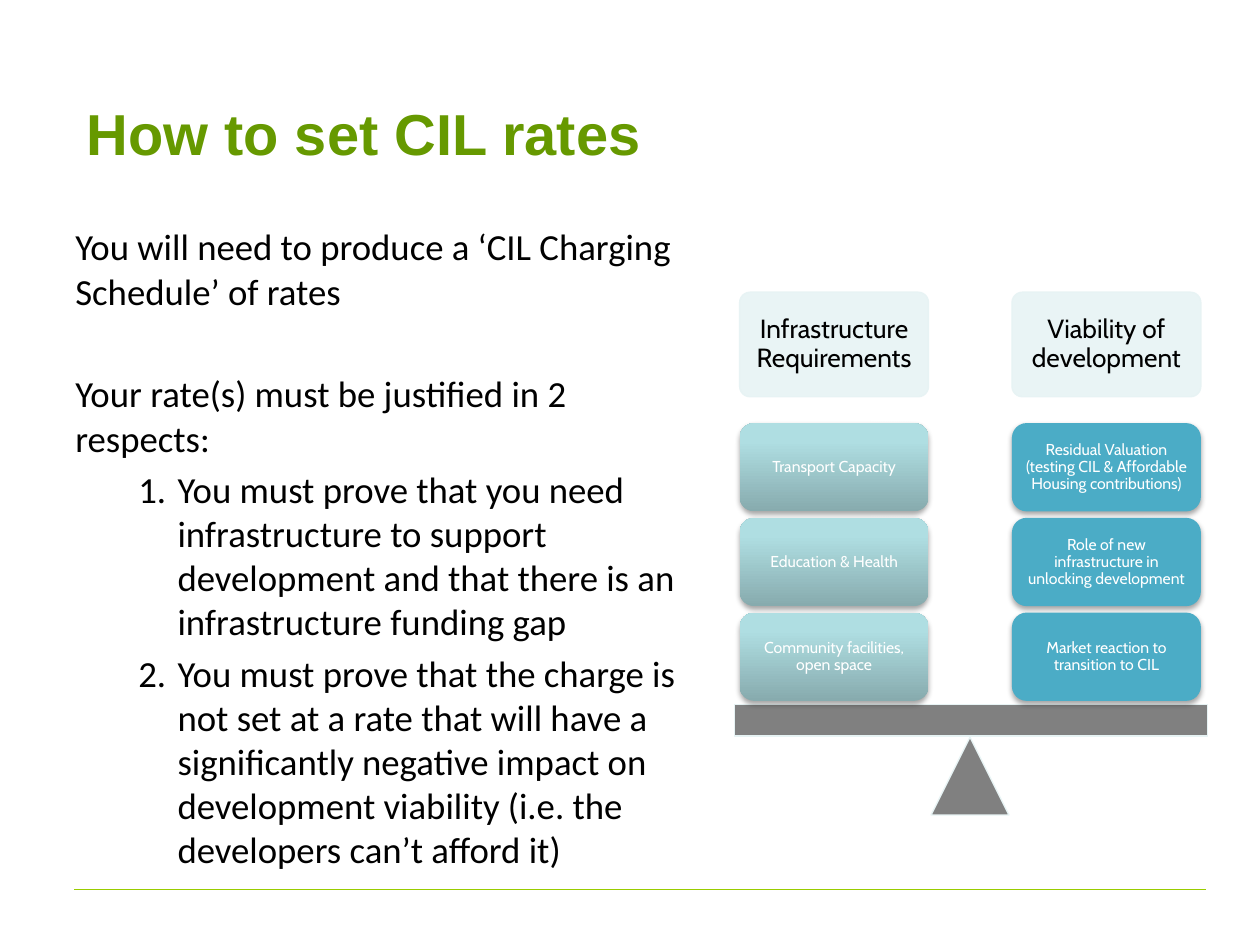
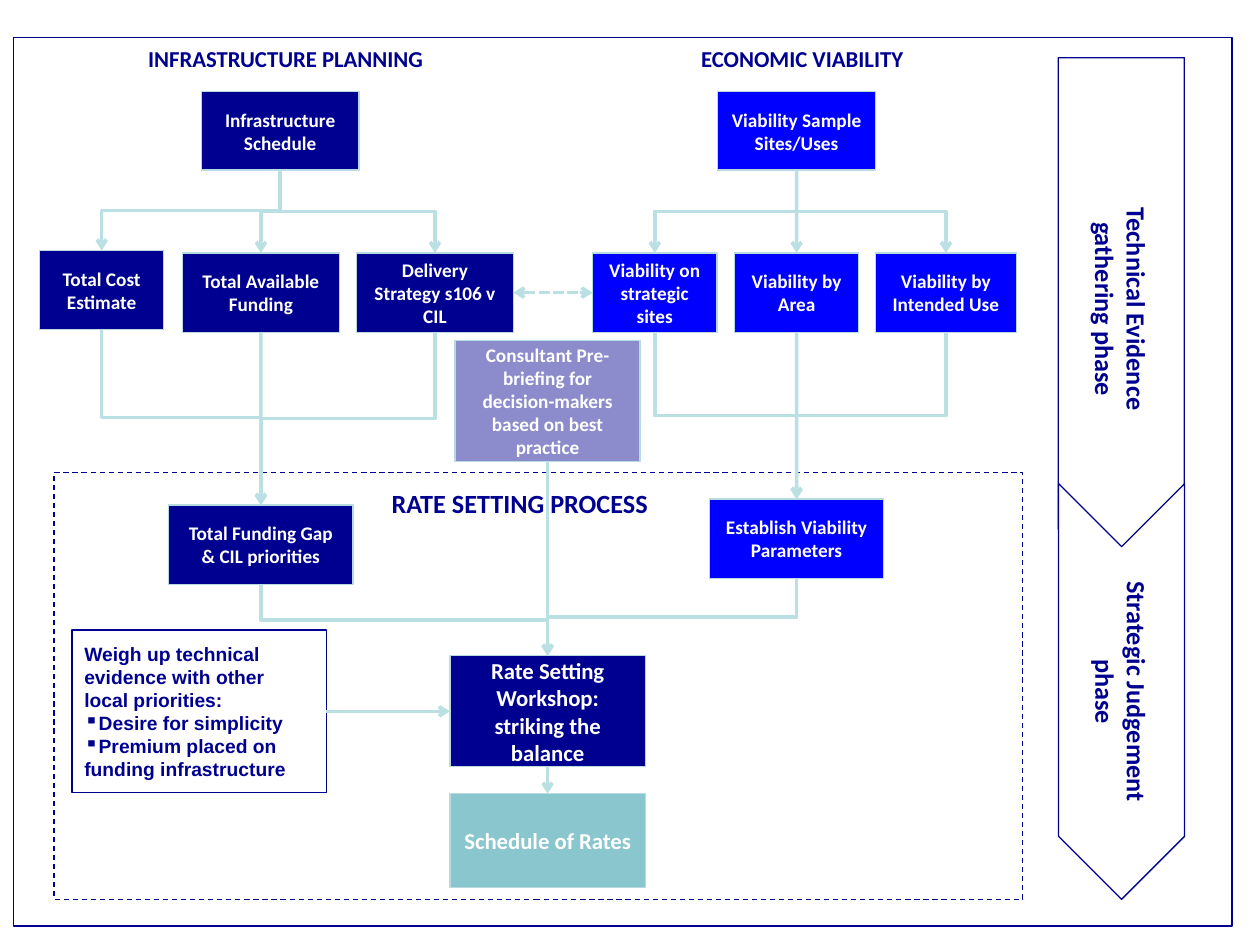
from lxml import etree
from pptx import Presentation
from pptx.dml.color import RGBColor
from pptx.enum import dml, shapes, text
from pptx.oxml.ns import qn
from pptx.util import Cm, Pt

WHITE = RGBColor(0xFF, 0xFF, 0xFF)
BLACK = RGBColor(0x00, 0x00, 0x00)
GREY = RGBColor(0x80, 0x80, 0x80)
TITLE_GREEN = RGBColor(0x66, 0x99, 0x00)
RULE_GREEN = RGBColor(0x99, 0xCC, 0x00)
PALE_TEAL = RGBColor(0xE7, 0xF3, 0xF4)
DARK_TEAL = RGBColor(0x87, 0xAB, 0xAE)
LIGHT_TEAL = RGBColor(0xAF, 0xDE, 0xE2)
CARD_BLUE = RGBColor(0x4B, 0xAC, 0xC6)
NAVY = RGBColor(0x00, 0x00, 0x90)
BLUE = RGBColor(0x00, 0x00, 0xFF)
TEAL = RGBColor(0x8A, 0xC6, 0xCD)
EDGE_TEAL = RGBColor(0xB6, 0xDC, 0xDF)
LINK_TEAL = RGBColor(0xBB, 0xE0, 0xE3)

SHAPE = shapes.MSO_SHAPE
LEFT, CENTER = text.PP_ALIGN.LEFT, text.PP_ALIGN.CENTER


def add_box(slide, frame, kind=None, fill=None, outline=None):
    """Add a preset shape, or a text box when no kind is given; frame is in cm."""
    lengths = [Cm(value) for value in frame]
    if kind is None:
        return slide.shapes.add_textbox(*lengths)
    shape = slide.shapes.add_shape(kind, *lengths)
    shape.shadow.inherit = False
    if fill is None:
        shape.fill.background()
    else:
        shape.fill.solid()
        shape.fill.fore_color.rgb = fill
    if outline is None:
        shape.line.fill.background()
    else:
        shape.line.color.rgb = outline
        shape.line.width = Pt(0.75)
    return shape


def write(shape, lines, size, name, color, bold=False, align=CENTER, inset=0.25):
    """Fill the shape with one paragraph per line and return the paragraphs."""
    frame = shape.text_frame
    frame.word_wrap = True
    frame.vertical_anchor = text.MSO_ANCHOR.MIDDLE
    frame.margin_left = frame.margin_right = Cm(inset)
    frame.margin_top = frame.margin_bottom = Cm(min(inset, 0.13))
    frame.text = "\n".join(lines)
    for paragraph in frame.paragraphs:
        paragraph.alignment = align
        font = paragraph.font
        font.size, font.name, font.bold = Pt(size), name, bold
        font.color.rgb = color
    return frame.paragraphs


presentation = Presentation()
presentation.slide_width, presentation.slide_height = Cm(25.4), Cm(19.05)
blank = presentation.slide_layouts[6]

# Slide 1: how to set CIL rates
slide = presentation.slides.add_slide(blank)
rule = slide.shapes.add_connector(
    shapes.MSO_CONNECTOR.STRAIGHT, Cm(1.5), Cm(17.93), Cm(24.31), Cm(17.93))
rule.line.color.rgb = RULE_GREEN
rule.line.width = Pt(0.75)
etree.SubElement(rule.element.spPr, qn("a:effectLst"))

title = add_box(slide, (1.5, 1.07, 22.86, 3.18))
write(title, ["How to set CIL rates"], 33, "Arial", TITLE_GREEN, True, LEFT)

body = add_box(slide, (1.27, 4.39, 13.13, 11.71))
paragraphs = write(body, [
    "You will need to produce a ‘CIL Charging Schedule’ of rates",
    "Your rate(s) must be justified in 2 respects:",
    "You must prove that you need infrastructure to support development "
    "and that there is an infrastructure funding gap",
    "You must prove that the charge is not set at a rate that will have a "
    "significantly negative impact on development viability "
    "(i.e. the developers can’t afford it)",
], 21, "Calibri", BLACK, align=LEFT)
body.text_frame.vertical_anchor = text.MSO_ANCHOR.TOP
for paragraph in paragraphs:
    paragraph.space_before = Pt(4.2)
paragraphs[1].space_before = Pt(33.6)
for paragraph in paragraphs[2:]:
    properties = paragraph._p.get_or_add_pPr()
    properties.set("marL", str(Cm(2.06)))
    properties.set("indent", str(-Cm(0.79)))
    number = etree.Element(qn("a:buAutoNum"), type="arabicPeriod")
    properties.find(qn("a:defRPr")).addprevious(number)

add_box(slide, (18.77, 14.86, 1.57, 1.57), SHAPE.ISOSCELES_TRIANGLE, GREY, PALE_TEAL)
add_box(slide, (14.81, 14.2, 9.53, 0.64), SHAPE.RECTANGLE, GREY, PALE_TEAL)

CARD_WIDTH, CARD_HEIGHT, CARD_TOP, CARD_STEP = 3.81, 1.78, 8.53, 1.91
columns = [
    (14.91, "Infrastructure Requirements", True,
     ["Transport Capacity", "Education & Health", "Community facilities, open space"]),
    (20.4, "Viability of development", False,
     ["Residual Valuation (testing CIL & Affordable Housing contributions)",
      "Role of new infrastructure in unlocking development",
      "Market reaction to transition to CIL"]),
]
for left, heading, shaded, cards in columns:
    header = add_box(slide, (left, 5.89, CARD_WIDTH, 2.11),
                     SHAPE.ROUNDED_RECTANGLE, PALE_TEAL, PALE_TEAL)
    header.adjustments[0] = 0.1
    for color in header.element.spPr.iter(qn("a:srgbClr")):
        etree.SubElement(color, qn("a:alpha"), val="90000")
    write(header, [heading], 15, "Cabin", BLACK, inset=0.15)[0].line_spacing = 0.9

    for row, label in enumerate(cards):
        card = add_box(slide, (left, CARD_TOP + row * CARD_STEP, CARD_WIDTH, CARD_HEIGHT),
                       SHAPE.ROUNDED_RECTANGLE, CARD_BLUE)
        if shaded:
            card.fill.gradient()
            card.fill.gradient_angle = 90
            dark, light = card.fill.gradient_stops
            dark.color.rgb, dark.position = DARK_TEAL, 0
            light.color.rgb, light.position = LIGHT_TEAL, 0.8
        shadow = etree.SubElement(
            card.element.spPr.find(qn("a:effectLst")), qn("a:outerShdw"),
            blurRad=str(Pt(3.1)), dist=str(Pt(1.8)), dir="5400000", rotWithShape="0")
        shade = etree.SubElement(shadow, qn("a:srgbClr"), val="000000")
        etree.SubElement(shade, qn("a:alpha"), val="35000")
        write(card, [label], 9, "Cabin", WHITE, inset=0.1)[0].line_spacing = 0.9

# Slide 2: from evidence to a schedule of rates
slide = presentation.slides.add_slide(blank)
add_box(slide, (0.28, 0.76, 24.56, 17.91), SHAPE.RECTANGLE, WHITE, NAVY)
panel = add_box(slide, (1.09, 9.52, 19.53, 8.61), SHAPE.RECTANGLE, None, NAVY)
panel.line.dash_style = dml.MSO_LINE.DASH

# name: (text, centre x, top, width, height, fill, text size)
steps = {
    "schedule": ("Infrastructure Schedule", 5.65, 1.85, 3.18, 1.58, NAVY, 11),
    "cost": ("Total Cost Estimate", 2.05, 5.05, 2.51, 1.6, NAVY, 11),
    "funding": ("Total Available Funding", 5.26, 5.1, 3.16, 1.6, NAVY, 11),
    "delivery": ("Delivery Strategy s106 v CIL", 8.77, 5.1, 3.16, 1.6, NAVY, 11),
    "gap": ("Total Funding Gap & CIL priorities", 5.26, 10.18, 3.72, 1.6, NAVY, 11),
    "sample": ("Viability Sample Sites/Uses", 16.06, 1.85, 3.18, 1.58, BLUE, 11),
    "strategic": ("Viability on strategic sites", 13.2, 5.1, 2.51, 1.6, BLUE, 11),
    "area": ("Viability by Area", 16.06, 5.1, 2.51, 1.6, BLUE, 11),
    "use": ("Viability by Intended Use", 19.07, 5.1, 2.84, 1.6, BLUE, 11),
    "parameters": ("Establish Viability Parameters", 16.06, 10.06, 3.5, 1.6, BLUE, 11),
    "briefing": ("Consultant Pre-briefing for decision-makers based on best practice",
                 11.04, 6.86, 3.73, 2.44, NAVY, 11),
    "workshop": ("Rate Setting Workshop: striking the balance",
                 11.04, 13.22, 3.94, 2.24, NAVY, 13),
    "rates": ("Schedule of Rates", 11.04, 16, 3.94, 1.9, TEAL, 13),
}
boxes = {}
for name, (label, center, top, width, height, fill, size) in steps.items():
    boxes[name] = add_box(slide, (center - width / 2, top, width, height),
                          SHAPE.RECTANGLE, fill, EDGE_TEAL)
    write(boxes[name], [label], size, "Calibri", WHITE, True)
briefing_fill = boxes["briefing"].element.spPr.find(qn("a:solidFill"))
etree.SubElement(briefing_fill[0], qn("a:alpha"), val="45000")

boxes["priorities"] = add_box(slide, (1.45, 12.7, 5.13, 3.28), SHAPE.RECTANGLE, None, NAVY)
paragraphs = write(boxes["priorities"], [
    "Weigh up technical evidence with other local priorities:",
    "Desire for simplicity",
    "Premium placed on funding infrastructure",
], 11, "Arial", NAVY, True, LEFT)
for paragraph in paragraphs[1:]:
    bullet = etree.Element(qn("a:buChar"), char="▪")
    paragraph._p.get_or_add_pPr().find(qn("a:defRPr")).addprevious(bullet)

links = [
    ("schedule", "cost"), ("schedule", "funding"), ("schedule", "delivery"),
    ("cost", "gap"), ("funding", "gap"), ("delivery", "gap"),
    ("sample", "strategic"), ("sample", "area"), ("sample", "use"),
    ("strategic", "parameters"), ("area", "parameters"), ("use", "parameters"),
    ("gap", "workshop"), ("parameters", "workshop"), ("briefing", "workshop"),
    ("workshop", "rates"), ("priorities", "workshop"), ("delivery", "strategic"),
]
sideways = links[-2:]
for link in links:
    source, target = (boxes[name] for name in link)
    start_x, end_x = (box.left + box.width // 2 for box in (source, target))
    start_y, end_y = source.top + source.height, target.top
    straight = link in sideways or abs(end_x - start_x) < Cm(0.02)
    kind = shapes.MSO_CONNECTOR.STRAIGHT if straight else shapes.MSO_CONNECTOR.ELBOW
    connector = slide.shapes.add_connector(kind, start_x, start_y, end_x, end_y)
    if straight:
        begin_side, end_side = (3, 1) if link in sideways else (2, 0)
        connector.begin_connect(source, begin_side)
        connector.end_connect(target, end_side)
    else:
        # A quarter turn about the centre makes the elbow leave downwards.
        drop, span = end_y - start_y, abs(end_x - start_x)
        connector.left = (start_x + end_x - drop) // 2
        connector.top = (start_y + end_y - span) // 2
        connector.width, connector.height = drop, span
        transform = connector.element.spPr.find(qn("a:xfrm"))
        transform.attrib.pop("flipH", None)
        if end_x > start_x:
            transform.set("rot", "16200000")
            transform.set("flipH", "1")
        else:
            transform.set("rot", "5400000")
    connector.line.color.rgb = LINK_TEAL
    connector.line.width = Pt(2)
    line = connector.line._get_or_add_ln()
    if link == ("delivery", "strategic"):
        connector.line.dash_style = dml.MSO_LINE.SQUARE_DOT
        etree.SubElement(line, qn("a:headEnd"), type="arrow")
    etree.SubElement(line, qn("a:tailEnd"), type="arrow")
    etree.SubElement(connector.element.spPr, qn("a:effectLst"))

headings = [
    ("INFRASTRUCTURE PLANNING", (0.79, 0.66, 9.93, 1.04), 13),
    ("ECONOMIC VIABILITY", (12.55, 0.79, 7.24, 0.79), 13),
    ("RATE SETTING PROCESS", (7.57, 9.55, 5.82, 1.17), 15),
]
for label, frame, size in headings:
    write(add_box(slide, frame), [label], size, "Calibri", NAVY, True)

phases = [
    ("Technical Evidence\vgathering phase", (17.22, 5.28, 10.77, 2.54), SHAPE.PENTAGON, None),
    ("Strategic Judgement phase", (18.42, 12.67, 8.38, 2.54), SHAPE.CHEVRON, WHITE),
]
for label, frame, kind, fill in phases:
    phase = add_box(slide, frame, kind, fill, NAVY)
    phase.rotation = 90
    write(phase, [label], 15, "Calibri", NAVY, True)

presentation.save("out.pptx")
